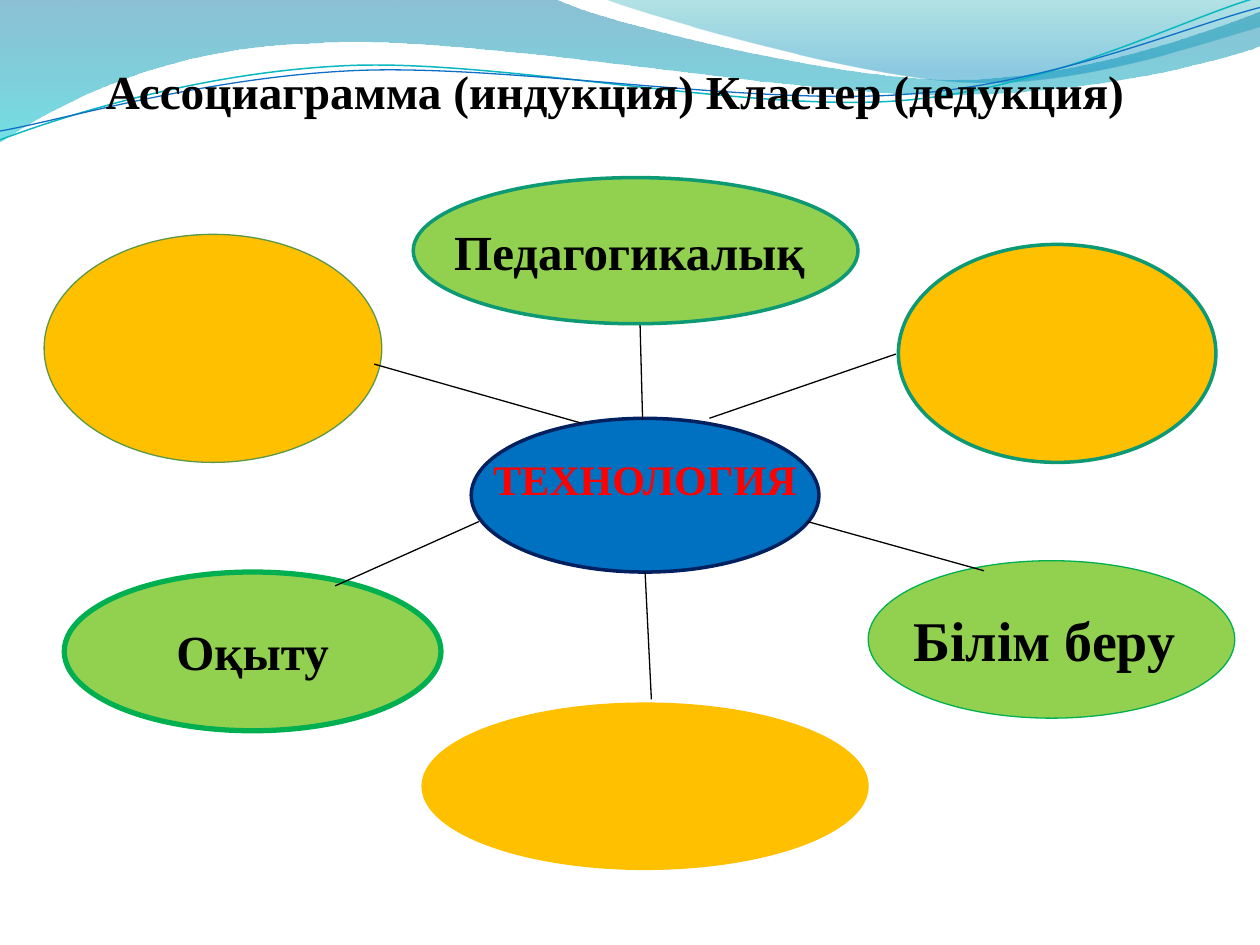
import math
from dataclasses import dataclass
from lxml import etree
from pptx import Presentation
from pptx import util as u
from pptx.dml.color import RGBColor as Rgb
from pptx.enum import shapes as kind, text as enum
from pptx.oxml.ns import qn


@dataclass(frozen=True)
class Theme:
    font: str = "Times New Roman"
    black: str = "000000"
    red: str = "FF0000"
    blue: str = "0070C0"
    navy: str = "002060"
    lime: str = "92D050"
    green: str = "00B050"
    teal: str = "0C9973"
    moss: str = "5B9747"
    gold: str = "FFC000"
    aqua: str = "0AB8BF"
    sea: str = "0F6FC6"
    head: int = 27
    hub: int = 24
    body: int = 28
    big: int = 32
    thin: float = 0.75
    bold: int = 2
    thick: int = 3


def turn(point, hub, angle):
    """Rotate a point clockwise around hub by an angle in degrees."""
    a = math.radians(angle)
    x, y = point[0] - hub[0], point[1] - hub[1]
    return (hub[0] + x * math.cos(a) - y * math.sin(a),
            hub[1] + x * math.sin(a) + y * math.cos(a))


def write(shape, words, size, color, font, pad=(0, 0, 0, 0), wrap=True):
    """Set centred bold text; pad is left, top, right, bottom in inches."""
    frame = shape.text_frame
    frame.word_wrap = wrap
    frame.auto_size = enum.MSO_AUTO_SIZE.NONE
    frame.vertical_anchor = enum.MSO_ANCHOR.MIDDLE
    (frame.margin_left, frame.margin_top,
     frame.margin_right, frame.margin_bottom) = map(u.Inches, pad)
    para = frame.paragraphs[0]
    para.alignment = enum.PP_ALIGN.CENTER
    run = para.add_run()
    run.text = words
    run.font.name, run.font.size, run.font.bold = font, u.Pt(size), True
    run.font.color.rgb = Rgb.from_string(color)


class Board:
    def __init__(self, slide, theme):
        self.slide, self.theme = slide, theme

    def stroke(self, item, color, width):
        item.line.color.rgb = Rgb.from_string(color)
        item.line.width = u.Pt(width)

    def trace(self, start, parts, close):
        """Draw parts of one point (straight) or three points (Bezier curve)."""
        spots = [(u.Inches(x), u.Inches(y)) for part in parts for x, y in part]
        pen = self.slide.shapes.build_freeform(*map(u.Inches, start))
        pen.add_line_segments(spots, close=close)
        shape = pen.convert_to_shape()
        shape.shadow.inherit = False
        steps = iter(list(shape.element.iter(qn("a:lnTo"))))
        for part in parts:
            group = [next(steps) for _ in part]
            if len(group) == 3:
                bend = etree.Element(qn("a:cubicBezTo"))
                group[0].addprevious(bend)
                for step in group:
                    bend.append(step[0])
                    step.getparent().remove(step)
        return shape

    def wave(self, start, parts, stops):
        """Fill a band downwards; each stop is position, colour, opacity in percent."""
        shape = self.trace(start, parts, True)
        shape.line.fill.background()
        shape.fill.gradient()
        shape.fill.gradient_angle = 270
        for stop, (place, color, _) in zip(shape.fill.gradient_stops, stops):
            stop.position = place / 100
            stop.color.rgb = Rgb.from_string(color)
        marks = shape.element.spPr.iter(qn("a:srgbClr"))
        for mark, (_, _, alpha) in zip(marks, stops):
            etree.SubElement(mark, qn("a:alpha")).set("val", str(alpha * 1000))

    def thread(self, start, parts, hub, color, width, tilt=2.7):
        """Draw a line laid level around hub, then tilted back into place."""
        level = [[turn(p, hub, tilt) for p in part] for part in parts]
        shape = self.trace(turn(start, hub, tilt), level, False)
        shape.rotation = 360 - tilt
        shape.fill.background()
        self.stroke(shape, color, width)

    def title(self, words):
        head = self.slide.shapes.title
        head.left, head.top, head.width, head.height = map(
            u.Inches, (0.23, 0.3, 9.3, 0.79))
        write(head, words, self.theme.head, self.theme.black, self.theme.font,
              pad=(0, 0.05, 0, 0))
        # The title belongs in front of the waves.
        head.element.getparent().append(head.element)

    def oval(self, box, fill, edge, width, words="", size=0, color=None, lift=0):
        shape = self.slide.shapes.add_shape(
            kind.MSO_SHAPE.OVAL, *map(u.Inches, box))
        shape.shadow.inherit = False
        shape.fill.solid()
        shape.fill.fore_color.rgb = Rgb.from_string(fill)
        self.stroke(shape, edge, width)
        if words:
            write(shape, words, size, color or self.theme.black, self.theme.font,
                  pad=(0.1, 0.05, 0.1, 0.05 + lift), wrap=False)

    def link(self, *ends):
        line = self.slide.shapes.add_connector(
            kind.MSO_CONNECTOR.STRAIGHT, *map(u.Inches, ends))
        self.stroke(line, self.theme.black, self.theme.thin)
        etree.SubElement(line.element.spPr, qn("a:effectLst"))


def main():
    deck = Presentation()
    deck.slide_width, deck.slide_height = u.Inches(10), u.Inches(7.5)
    t = Theme()
    board = Board(deck.slides.add_slide(deck.slide_layouts[5]), t)

    board.wave((0, 0), [[(4.4, -0.01)],
                        [(4.76, 0.17), (6.64, 0.63), (7.58, 0.63)],
                        [(8.53, 0.63), (9.58, 0.26), (10, 0.09)],
                        [(10.01, 0.36)],
                        [(9.83, 0.44), (8.7, 0.76), (7.46, 0.75)],
                        [(6.22, 0.75), (3.82, 0.28), (2.57, 0.34)],
                        [(1.29, 0.36), (0.46, 0.83), (-0.01, 1.13)],
                        [(0, 0)]],
               [(0, "0074A1", 45), (100, "00C6CF", 55)])
    board.wave((4.79, -0.01), [[(5.09, 0.11), (6.82, 0.62), (7.69, 0.65)],
                               [(8.56, 0.69), (9.61, 0.32), (10, 0.21)],
                               [(10, 0)], [(4.79, -0.01)]],
               [(0, "00A1A9", 30), (80, "008BBF", 45)])
    board.thread((0, 1.11), [[(0.48, 0.93), (1.58, 0.57), (2.77, 0.52)],
                             [(3.95, 0.47), (5.93, 0.89), (7.13, 0.8)],
                             [(8.33, 0.71), (9.38, 0.15), (9.98, -0.02)]],
                 (4.99, 0.58), t.aqua, 0.85)
    board.thread((0, 1.04), [[(0.47, 0.96), (1.64, 0.61), (2.83, 0.56)],
                             [(4.03, 0.51), (5.97, 0.84), (7.17, 0.75)],
                             [(8.36, 0.67), (9.41, 0.21), (10, 0.06)]],
                 (5, 0.59), t.sea, t.thin)
    board.title("Ассоциаграмма (индукция) Кластер (дедукция)")

    board.oval((3.74, 3.32, 2.76, 1.22), t.blue, t.navy, t.bold,
               "ТЕХНОЛОГИЯ", t.hub, t.red, lift=0.26)
    board.oval((6.89, 4.45, 2.91, 1.25), t.lime, t.green, t.thin,
               "Білім беру ", t.big)
    board.link(6.41, 4.14, 7.81, 4.53)
    board.oval((0.35, 1.86, 2.68, 1.81), t.gold, t.moss, t.thin)
    board.oval((0.51, 4.54, 2.99, 1.26), t.lime, t.green, t.thick,
               "Оқыту", t.body)
    board.oval((7.13, 1.94, 2.52, 1.73), t.gold, t.teal, t.bold)
    board.oval((3.28, 1.41, 3.53, 1.16), t.lime, t.teal, t.bold,
               "Педагогикалық ", t.body)
    board.oval((3.35, 5.58, 3.54, 1.32), t.gold, t.gold, t.thin)

    for ends in [(5.12, 4.54, 5.17, 5.55), (2.97, 2.89, 4.62, 3.36),
                 (5.63, 3.32, 7.11, 2.81), (3.8, 4.14, 2.66, 4.65),
                 (5.08, 2.58, 5.1, 3.33)]:
        board.link(*ends)
    deck.save("out.pptx")


if __name__ == "__main__":
    main()
